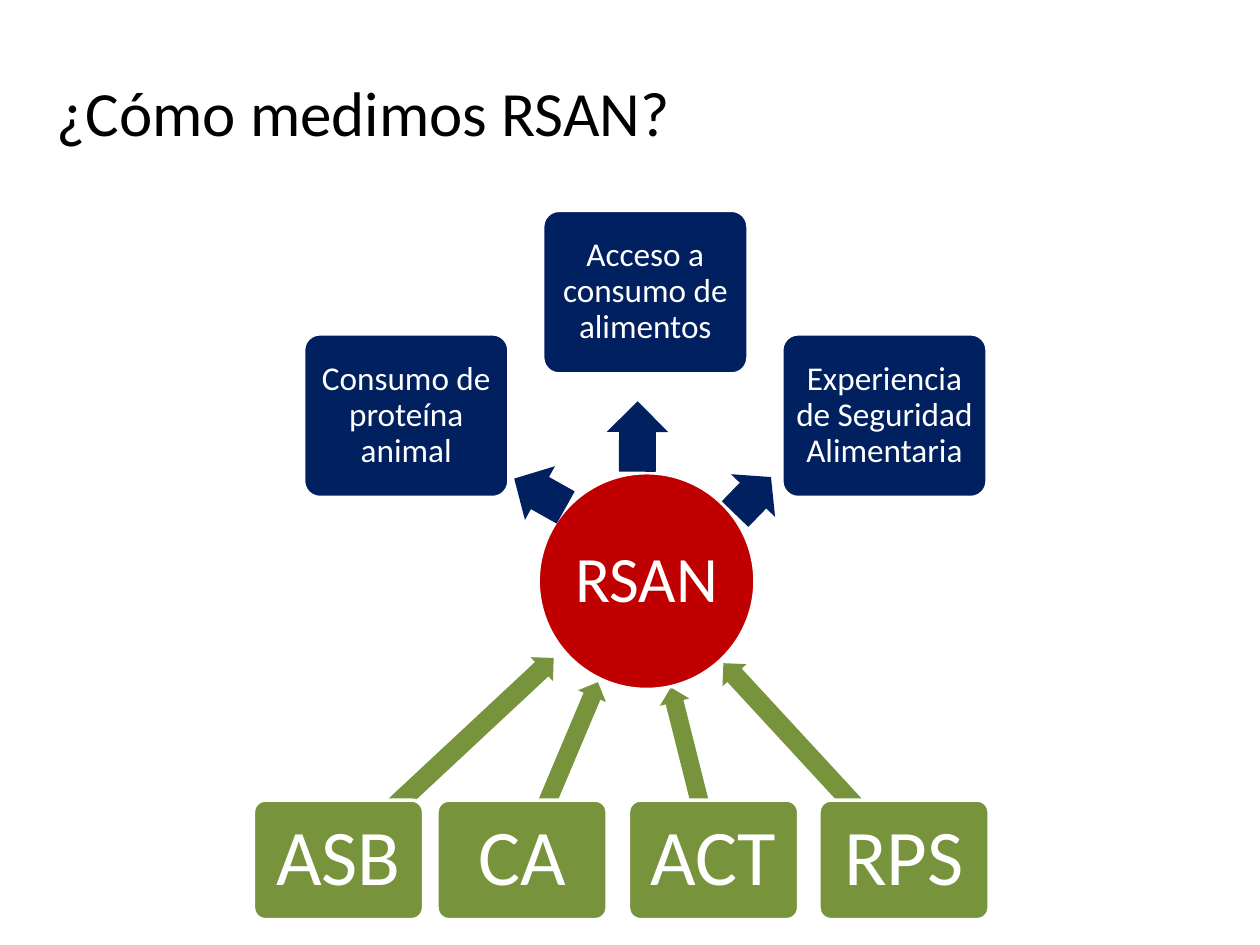
from pptx import Presentation
from pptx.dml.color import RGBColor
from pptx.enum.shapes import MSO_SHAPE as SHAPE
from pptx.enum.text import MSO_ANCHOR as ANCHOR, PP_ALIGN as ALIGN
from pptx.util import Cm, Pt

COLORS = {
    "black": "000000",
    "white": "FFFFFF",
    "red": "C00000",
    "navy": "002060",
    "green": "77933C",
}


class Diagram:
    def __init__(self, slide, font="Calibri"):
        self.slide = slide
        self.font = font

    def color(self, name):
        return RGBColor.from_string(COLORS[name])

    def label(self, tf, text, size, color, align=ALIGN.LEFT, inset=None, spacing=None):
        tf.word_wrap = True
        tf.vertical_anchor = ANCHOR.MIDDLE
        if inset is not None:
            tf.margin_left = tf.margin_right = Cm(inset)
            tf.margin_top = tf.margin_bottom = Cm(inset)
        p = tf.paragraphs[0]
        p.alignment = align
        p.line_spacing = spacing
        r = p.add_run()
        r.text = text
        r.font.name = self.font
        r.font.size = Pt(size)
        r.font.color.rgb = self.color(color)

    def title(self, text, x, y, w, h):
        box = self.slide.shapes.add_textbox(Cm(x), Cm(y), Cm(w), Cm(h))
        self.label(box.text_frame, text, 36, "black")

    def shape(self, kind, x, y, w, h, fill):
        sp = self.slide.shapes.add_shape(kind, Cm(x), Cm(y), Cm(w), Cm(h))
        sp.shadow.inherit = False
        sp.fill.solid()
        sp.fill.fore_color.rgb = self.color(fill)
        return sp

    def node(self, kind, text, x, y, w, h, fill, size, inset):
        """Add a white-edged shape with its label inside."""
        sp = self.shape(kind, x, y, w, h, fill)
        sp.line.color.rgb = self.color("white")
        sp.line.width = Pt(2)
        if kind == SHAPE.ROUNDED_RECTANGLE:
            sp.adjustments[0] = 0.1
        self.label(sp.text_frame, text, size, "white", ALIGN.CENTER, inset, 0.9)

    def arrow(self, x, y, w, h, angle, fill):
        """Add a left arrow turned clockwise by angle degrees."""
        sp = self.shape(SHAPE.LEFT_ARROW, x, y, w, h, fill)
        sp.line.fill.background()
        sp.adjustments[0] = 0.6
        sp.adjustments[1] = 0.5
        sp.rotation = angle


def main():
    prs = Presentation()
    prs.slide_width, prs.slide_height = Cm(25.4), Cm(19.05)
    d = Diagram(prs.slides.add_slide(prs.slide_layouts[6]))

    d.title("¿Cómo medimos RSAN?", 0.89, 1.37, 13.59, 1.73)

    # Label, box left, arrow (left, top, width, height, angle)
    pillars = [
        ("ASB", 5.11, (6.02, 14.96, 5.94, 0.66, 137)),
        ("RPS", 16.51, (13.72, 15.01, 5.36, 0.66, 47.3)),
        ("CA", 8.81, (9.35, 15.24, 3.89, 0.61, 112.9)),
        ("ACT", 12.67, (12.17, 15.29, 3.58, 0.61, 75.9)),
    ]
    for name, x, arrow in pillars:
        d.arrow(*arrow, "green")
        d.node(SHAPE.ROUNDED_RECTANGLE, name, x, 16.13, 3.43, 2.41, "green", 45, 0.23)

    d.node(SHAPE.OVAL, "RSAN", 10.85, 9.53, 4.37, 4.37, "red", 37, 0.08)

    # Label, box top, arrow (left, top, width, height, angle)
    measures = [
        ("Consumo de proteína animal", 6.73, (10.29, 9.32, 1.19, 1.24, 29.3)),
        ("Acceso a consumo de alimentos", 4.24, (12.14, 8.18, 1.42, 1.24, 90.3)),
        ("Experiencia de Seguridad Alimentaria", 6.73, (14.66, 9.37, 1.04, 1.24, 134.1)),
    ]
    for i, (name, y, arrow) in enumerate(measures):
        d.arrow(*arrow, "navy")
        d.node(SHAPE.ROUNDED_RECTANGLE, name, 6.12 + 4.82 * i, y, 4.14, 3.3, "navy", 19, 0.1)

    prs.save("out.pptx")


if __name__ == "__main__":
    main()
